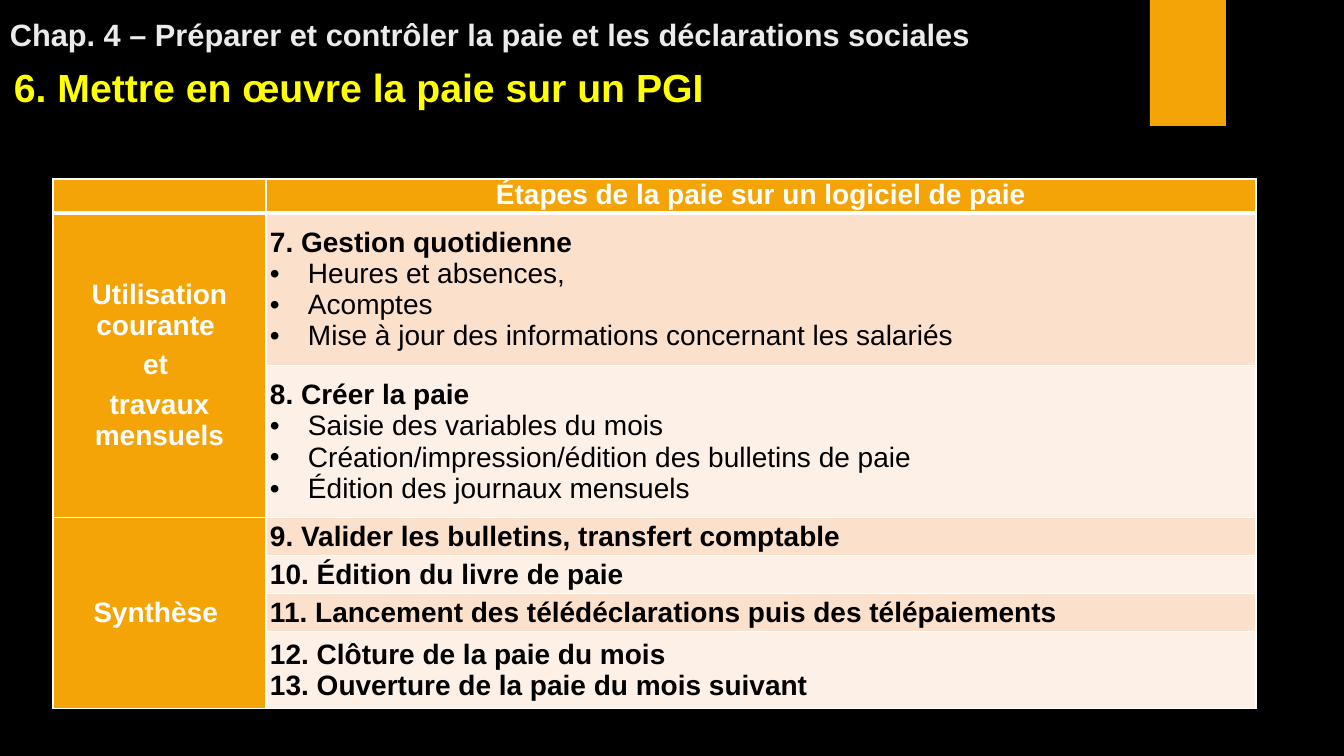
from lxml import etree
from pptx import Presentation
from pptx.dml.color import RGBColor
from pptx.enum.shapes import MSO_SHAPE
from pptx.enum.text import MSO_ANCHOR, PP_ALIGN
from pptx.oxml.ns import qn
from pptx.util import Emu, Pt

RECTANGLE = MSO_SHAPE.RECTANGLE
TOP, MIDDLE, BOTTOM = MSO_ANCHOR.TOP, MSO_ANCHOR.MIDDLE, MSO_ANCHOR.BOTTOM
LEFT, CENTER, JUSTIFY = PP_ALIGN.LEFT, PP_ALIGN.CENTER, PP_ALIGN.JUSTIFY

SLIDE_WIDTH, SLIDE_HEIGHT = 1344, 756
EMU_PER_PX = 12192000 / SLIDE_WIDTH
FONT = "Arial"
COLORS = {
    "black": "000000",
    "white": "FFFFFF",
    "grey": "EBEBEB",
    "yellow": "FFFF00",
    "orange": "F5A408",
    "peach": "FBE0CC",
    "cream": "FDF0E7",
}

HEADER = "Étapes de la paie sur un logiciel de paie"
COLUMN_WIDTHS = [213, 990]
ROW_HEIGHTS = [33, 153, 152, 38, 38, 38, 77]
# Label paragraphs, first row, last row
PHASES = [
    (["Utilisation courante ", "et ", "travaux mensuels"], 1, 2),
    (["Synthèse "], 3, 6),
]
# Bold step titles, bulleted details
STEPS = [
    (["7. Gestion quotidienne"],
     ["Heures et absences, ", "Acomptes",
      "Mise à jour des informations concernant les salariés "]),
    (["8. Créer la paie "],
     ["Saisie des variables du mois",
      "Création/impression/édition des bulletins de paie ",
      "Édition des journaux mensuels"]),
    (["9. Valider les bulletins, transfert comptable"], []),
    (["10. Édition du livre de paie"], []),
    (["11. Lancement des télédéclarations puis des télépaiements"], []),
    (["12. Clôture de la paie du mois ",
      "13. Ouverture de la paie du mois suivant"], []),
]


def px(length):
    return Emu(round(length * EMU_PER_PX))


def rgb(name):
    return RGBColor.from_string(COLORS[name])


class SlideBuilder:
    def __init__(self, slide):
        self.slide = slide

    def background(self, color):
        fill = self.slide.background.fill
        fill.solid()
        fill.fore_color.rgb = rgb(color)

    def rectangle(self, left, top, width, height, color):
        shape = self.slide.shapes.add_shape(
            RECTANGLE, px(left), px(top), px(width), px(height))
        shape.shadow.inherit = False
        shape.fill.solid()
        shape.fill.fore_color.rgb = rgb(color)
        shape.line.fill.background()

    def set_lines(self, text_frame, lines, size, color, align=LEFT, gap=0):
        text_frame.text = "\n".join(lines)
        for index, paragraph in enumerate(text_frame.paragraphs):
            paragraph.alignment = align
            if gap and index:
                paragraph.space_before = Pt(gap)
            for run in paragraph.runs:
                run.font.name = FONT
                run.font.size = Pt(size)
                run.font.bold = True
                run.font.color.rgb = rgb(color)

    def text(self, left, top, width, height, line, size, color, anchor):
        box = self.slide.shapes.add_textbox(
            px(left), px(top), px(width), px(height))
        box.text_frame.word_wrap = True
        box.text_frame.vertical_anchor = anchor
        self.set_lines(box.text_frame, [line], size, color)

    def table(self, left, top, widths, heights):
        frame = self.slide.shapes.add_table(
            len(heights), len(widths), px(left), px(top),
            px(sum(widths)), px(sum(heights)))
        table = frame.table
        table.first_row = table.horz_banding = False
        for column, width in zip(table.columns, widths):
            column.width = px(width)
        for row, height in zip(table.rows, heights):
            row.height = px(height)
        return table

    def cell(self, cell, color, anchor=MIDDLE, top_line=1, bottom_line=1):
        cell.margin_left = cell.margin_right = px(4)
        cell.margin_top = cell.margin_bottom = 0
        cell.vertical_anchor = anchor
        properties = cell._tc.get_or_add_tcPr()
        for side, points in zip("LRTB", (1, 1, top_line, bottom_line)):
            line = etree.SubElement(properties, qn(f"a:ln{side}"), w=str(Pt(points)))
            solid = etree.SubElement(line, qn("a:solidFill"))
            etree.SubElement(solid, qn("a:srgbClr"), val=COLORS["white"])
        cell.fill.solid()
        cell.fill.fore_color.rgb = rgb(color)

    def bullet(self, paragraph, indent):
        properties = paragraph._p.get_or_add_pPr()
        properties.set("marL", str(px(indent)))
        properties.set("indent", str(-px(indent)))
        etree.SubElement(properties, qn("a:buFont"), typeface=FONT)
        etree.SubElement(properties, qn("a:buChar"), char="•")

    def step(self, cell, titles, details):
        self.set_lines(cell.text_frame, titles + details, 20, "black", JUSTIFY)
        for paragraph in cell.text_frame.paragraphs[len(titles):]:
            self.bullet(paragraph, 38)
            for run in paragraph.runs:
                run.font.bold = False


def main():
    presentation = Presentation()
    presentation.slide_width = px(SLIDE_WIDTH)
    presentation.slide_height = px(SLIDE_HEIGHT)
    builder = SlideBuilder(
        presentation.slides.add_slide(presentation.slide_layouts[6]))

    # Background, accent and titles
    builder.background("black")
    builder.rectangle(1150, 0, 76, 126, "orange")
    builder.text(0, -2, 1282, 60,
                 "Chap. 4 – Préparer et contrôler la paie et les déclarations sociales",
                 22, "grey", BOTTOM)
    builder.text(4, 58, 834, 57, "6. Mettre en œuvre la paie sur un PGI",
                 28, "yellow", TOP)

    # Table header
    table = builder.table(53, 179, COLUMN_WIDTHS, ROW_HEIGHTS)
    for column in range(len(COLUMN_WIDTHS)):
        builder.cell(table.cell(0, column), "orange", TOP, bottom_line=3)
    table.cell(0, 0).text_frame.paragraphs[0].font.size = Pt(18)
    builder.set_lines(table.cell(0, 1).text_frame, [HEADER], 20, "white", CENTER)

    # Steps, on alternating bands
    for row, (titles, details) in enumerate(STEPS, start=1):
        top_line = 3 if row == 1 else 1
        builder.cell(table.cell(row, 0), "orange", top_line=top_line)
        builder.cell(table.cell(row, 1), "peach" if row % 2 else "cream",
                     top_line=top_line)
        builder.step(table.cell(row, 1), titles, details)

    # Phases, merged over their steps
    for lines, first, last in PHASES:
        label = table.cell(first, 0)
        label.merge(table.cell(last, 0))
        builder.set_lines(label.text_frame, lines, 20, "white", CENTER, gap=6)

    presentation.save("out.pptx")


if __name__ == "__main__":
    main()
